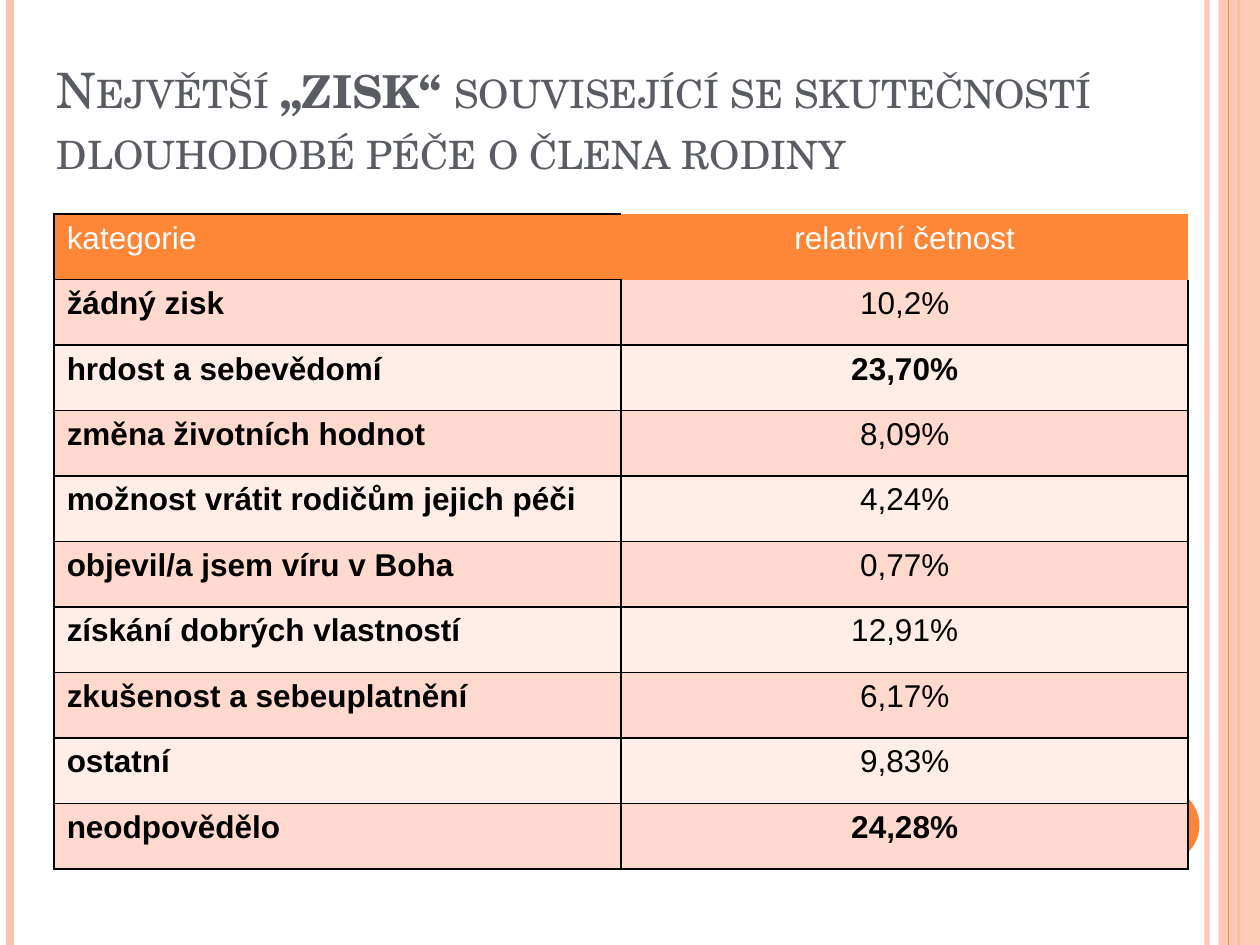
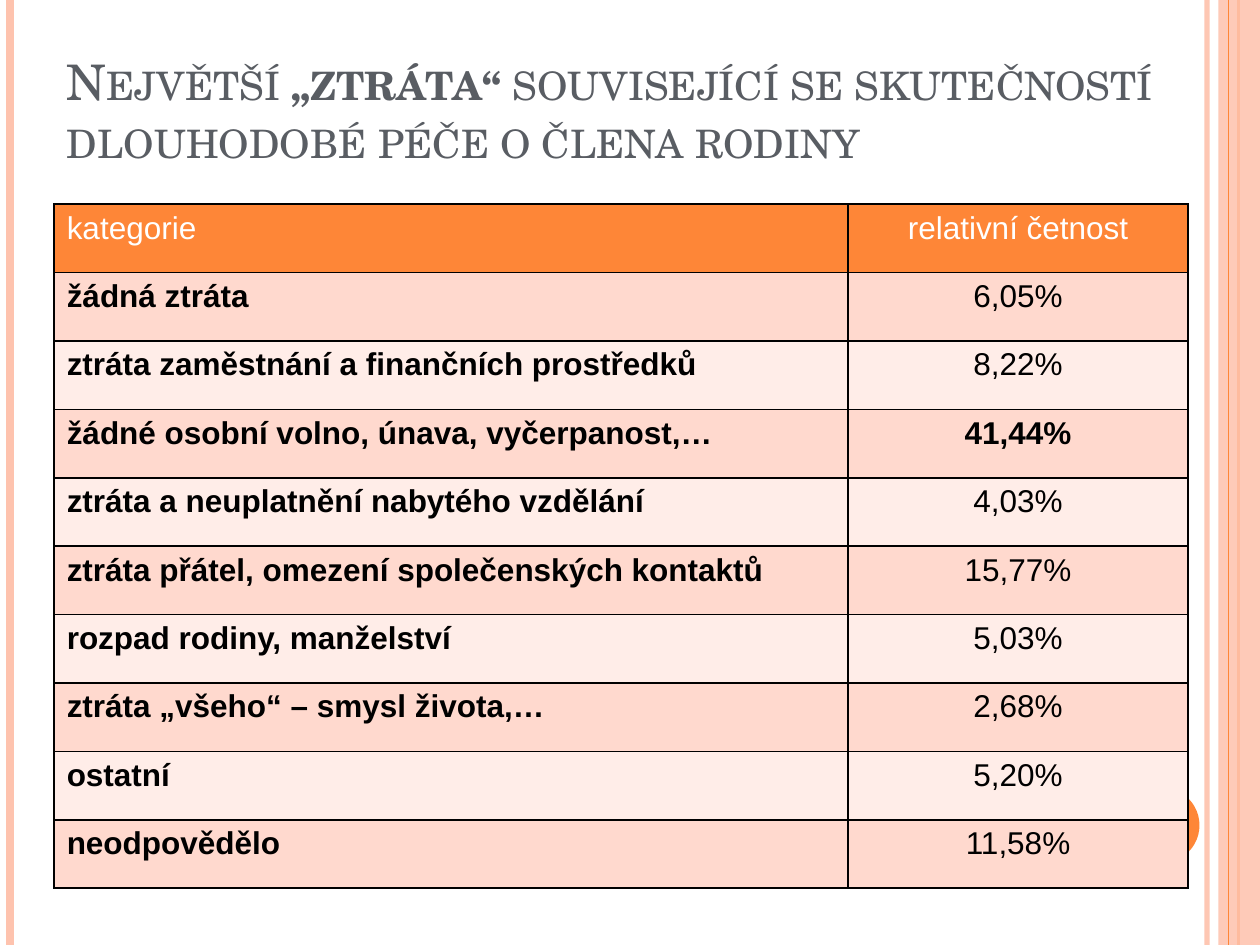
from lxml import etree
from pptx import Presentation
from pptx.dml.color import RGBColor
from pptx.enum.shapes import MSO_CONNECTOR, MSO_SHAPE
from pptx.enum.text import MSO_ANCHOR, MSO_AUTO_SIZE, PP_ALIGN
from pptx.oxml.ns import qn
from pptx.util import Inches, Pt

STRAIGHT = MSO_CONNECTOR.STRAIGHT
RECTANGLE, OVAL = MSO_SHAPE.RECTANGLE, MSO_SHAPE.OVAL
LEFT, CENTER = PP_ALIGN.LEFT, PP_ALIGN.CENTER
BOTTOM, NO_AUTOFIT = MSO_ANCHOR.BOTTOM, MSO_AUTO_SIZE.NONE

ORANGE = RGBColor(0xFE, 0x86, 0x37)
PEACH = RGBColor(0xFE, 0xC3, 0xAE)
ROW_DARK = RGBColor(0xFF, 0xD9, 0xCE)
ROW_LIGHT = RGBColor(0xFF, 0xED, 0xE8)
TITLE_GRAY = RGBColor(0x59, 0x5D, 0x63)
WHITE = RGBColor(0xFF, 0xFF, 0xFF)
BLACK = RGBColor(0, 0, 0)

TITLE_FONT, BODY_FONT = "TeX Gyre Schola", "Arial"
SLIDE_WIDTH, SLIDE_HEIGHT = 10, 7.5
TABLE_LEFT = 0.43
TITLE_ONLY = 5
SIDES = "LRTB"

HEADER = ("kategorie", "relativní četnost")
TITLE_START = "Největší "
TITLE_END = "související se skutečností dlouhodobé péče o člena rodiny"

GAINS = [
    ("žádný zisk", "10,2%"),
    ("hrdost a sebevědomí", "23,70%"),
    ("změna životních hodnot", "8,09%"),
    ("možnost vrátit rodičům jejich péči", "4,24%"),
    ("objevil/a jsem víru v Boha", "0,77%"),
    ("získání dobrých vlastností", "12,91%"),
    ("zkušenost a sebeuplatnění", "6,17%"),
    ("ostatní", "9,83%"),
    ("neodpovědělo", "24,28%"),
]
LOSSES = [
    ("žádná ztráta", "6,05%"),
    ("ztráta zaměstnání a finančních prostředků", "8,22%"),
    ("žádné osobní volno, únava, vyčerpanost,…", "41,44%"),
    ("ztráta a neuplatnění nabytého vzdělání", "4,03%"),
    ("ztráta přátel, omezení společenských kontaktů", "15,77%"),
    ("rozpad rodiny, manželství", "5,03%"),
    ("ztráta „všeho“ – smysl života,…", "2,68%"),
    ("ostatní", "5,20%"),
    ("neodpovědělo", "11,58%"),
]


class Deck:
    def __init__(self):
        self.presentation = Presentation()
        self.presentation.slide_width = Inches(SLIDE_WIDTH)
        self.presentation.slide_height = Inches(SLIDE_HEIGHT)
        self.slide = None

    def new_slide(self):
        layout = self.presentation.slide_layouts[TITLE_ONLY]
        self.slide = self.presentation.slides.add_slide(layout)
        # Side bands and the round badge
        self.vertical_line(9.58, PEACH, 3, opacity=93)
        self.vertical_line(0.08, PEACH, 4.5)
        self.vertical_line(9.83, ORANGE, 1.5)
        self.plain_shape(RECTANGLE, 9.67, 0, 0.33, SLIDE_HEIGHT, PEACH, opacity=87)
        self.vertical_line(9.75, ORANGE, 0.75)
        self.plain_shape(OVAL, 8.92, 6.25, 0.6, 0.6, ORANGE)

    def set_opacity(self, shape, opacity):
        color = shape._element.spPr.find(".//" + qn("a:srgbClr"))
        etree.SubElement(color, qn("a:alpha"), val=str(opacity * 1000))

    def vertical_line(self, x, color, width, opacity=100):
        line = self.slide.shapes.add_connector(
            STRAIGHT, Inches(x), Inches(0), Inches(x), Inches(SLIDE_HEIGHT))
        line.line.color.rgb = color
        line.line.width = Pt(width)
        etree.SubElement(line._element.spPr, qn("a:effectLst"))
        if opacity < 100:
            self.set_opacity(line, opacity)

    def plain_shape(self, kind, left, top, width, height, color, opacity=100):
        shape = self.slide.shapes.add_shape(
            kind, Inches(left), Inches(top), Inches(width), Inches(height))
        shape.shadow.inherit = False
        shape.fill.solid()
        shape.fill.fore_color.rgb = color
        shape.line.fill.background()
        if opacity < 100:
            self.set_opacity(shape, opacity)

    def add_run(self, paragraph, text, font, size, color, bold=False):
        run = paragraph.add_run()
        run.text = text
        run.font.name = font
        run.font.size = Pt(size)
        run.font.color.rgb = color
        run.font.bold = bold
        return run

    def title(self, keyword, left, top, width, height, size, keyword_size):
        title = self.slide.shapes.title
        title.left, title.top = Inches(left), Inches(top)
        title.width, title.height = Inches(width), Inches(height)
        frame = title.text_frame
        frame.auto_size = NO_AUTOFIT
        frame.word_wrap = True
        frame.vertical_anchor = BOTTOM
        paragraph = frame.paragraphs[0]
        paragraph.alignment = LEFT
        for text, points, bold in ((TITLE_START, size, False),
                                   (keyword, keyword_size, True),
                                   (TITLE_END, size, False)):
            run = self.add_run(paragraph, text, TITLE_FONT, points, TITLE_GRAY, bold)
            run.font._element.set("cap", "small")

    def cell_borders(self, cell, hidden):
        properties = cell._tc.get_or_add_tcPr()
        for side in SIDES:
            border = etree.SubElement(properties, qn("a:ln" + side), w=str(Pt(1)))
            if side in hidden:
                etree.SubElement(border, qn("a:noFill"))
            else:
                fill = etree.SubElement(border, qn("a:solidFill"))
                etree.SubElement(fill, qn("a:srgbClr"), val=str(BLACK))

    def table(self, rows, top, height, column_widths, bold_values, hidden_borders):
        """bold_values: values to stress; hidden_borders: sides by (row, column)."""
        content = [HEADER] + rows
        table = self.slide.shapes.add_table(
            len(content), len(HEADER), Inches(TABLE_LEFT), Inches(top),
            Inches(sum(column_widths)), Inches(height)).table
        for column, width in zip(table.columns, column_widths):
            column.width = Inches(width)
        for row in table.rows:
            row.height = Inches(height / len(content))
        for r, texts in enumerate(content):
            fill = ORANGE if r == 0 else ROW_DARK if r % 2 else ROW_LIGHT
            for c, text in enumerate(texts):
                cell = table.cell(r, c)
                self.cell_borders(cell, hidden_borders.get((r, c), ""))
                cell.fill.solid()
                cell.fill.fore_color.rgb = fill
                paragraph = cell.text_frame.paragraphs[0]
                paragraph.alignment = CENTER if c else LEFT
                bold = r > 0 and (c == 0 or text in bold_values)
                self.add_run(paragraph, text, BODY_FONT, 18,
                             BLACK if r else WHITE, bold)


def main():
    deck = Deck()

    # Greatest gain
    deck.new_slide()
    deck.title("„zisk“ ", 0.35, 0.29, 9.37, 1.18, size=27.9, keyword_size=32.4)
    deck.table(GAINS, 1.7, 5.2, (4.5, 4.5), ("23,70%", "24,28%"),
               {(0, 0): "R", (0, 1): SIDES, (1, 1): "T"})

    # Greatest loss
    deck.new_slide()
    deck.title("„ztráta“ ", TABLE_LEFT, 0.29, 9, 1.1, size=28, keyword_size=28)
    deck.table(LOSSES, 1.62, 5.43, (6.3, 2.7), ("41,44%",), {})

    deck.presentation.save("out.pptx")


if __name__ == "__main__":
    main()
